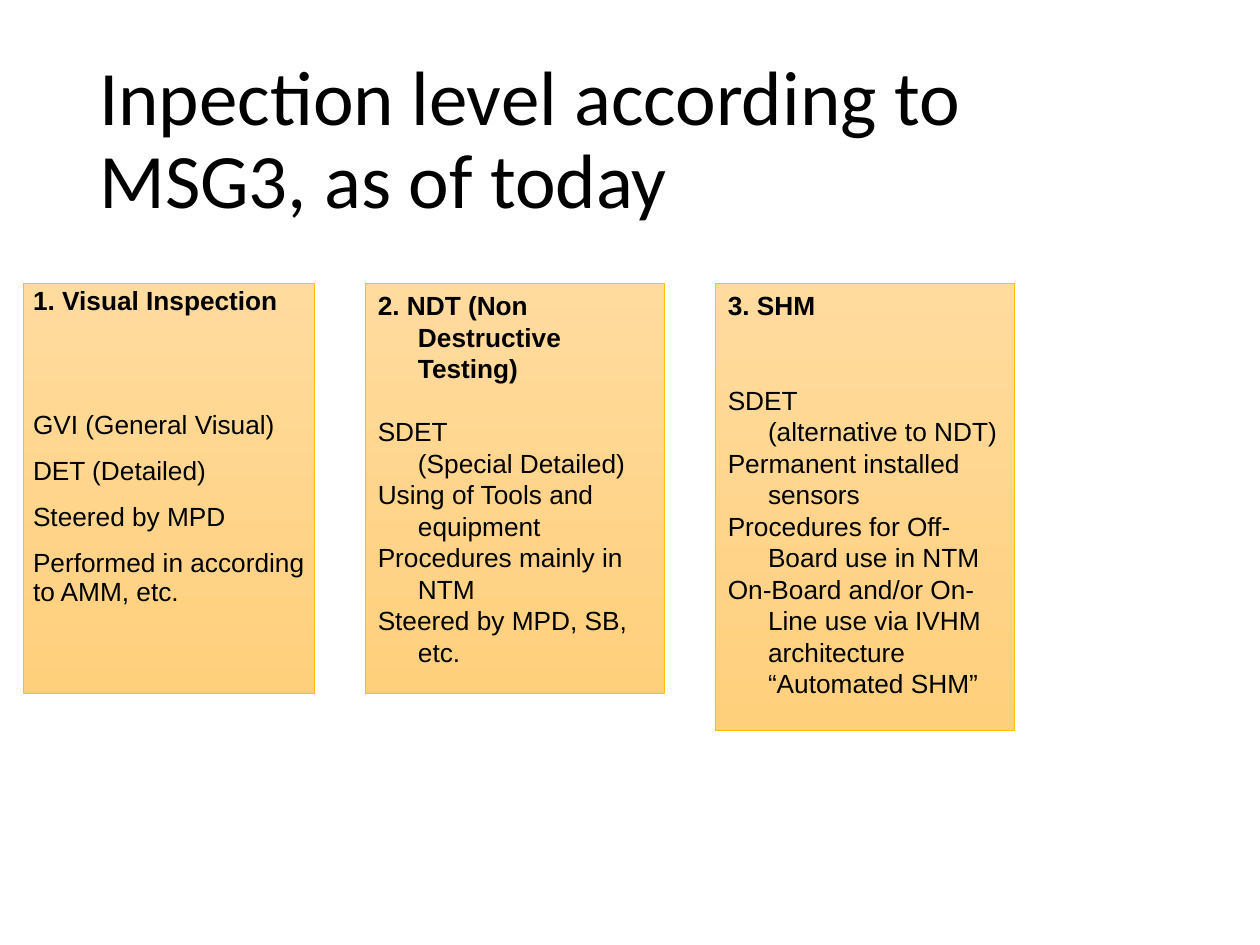
from pptx import Presentation
from pptx.dml.color import RGBColor
from pptx.enum.shapes import MSO_SHAPE
from pptx.enum.text import MSO_ANCHOR, PP_ALIGN
from pptx.util import Pt

RECT = MSO_SHAPE.RECTANGLE
TOP = MSO_ANCHOR.TOP
MIDDLE = MSO_ANCHOR.MIDDLE
LEFT = PP_ALIGN.LEFT


def paint(color, code):
    color.rgb = RGBColor.from_string(code)


def write(para, text, size=15, face="Arial", bold=False, lead=1.0,
          before=0, after=0, hang=0):
    para.text = text
    para.alignment = LEFT
    para.line_spacing = lead
    para.space_before = Pt(before)
    para.space_after = Pt(after)
    if hang:
        props = para._p.get_or_add_pPr()
        props.set("marL", str(Pt(hang)))
        props.set("indent", str(-Pt(hang)))
    for part in para.runs:
        font = part.font
        font.size, font.name, font.bold = Pt(size), face, bold
        paint(font.color, "000000")
    for gap in para._p.br_lst if hasattr(para._p, "br_lst") else para._p.xpath("a:br"):
        mark = gap.makeelement(gap.tag.replace("}br", "}rPr"), {"sz": str(size * 100)})
        gap.append(mark)


def add_title(slide, text):
    title = slide.shapes.title
    title.left, title.top = Pt(49.5), Pt(28.75)
    title.width, title.height = Pt(621), Pt(104.4)
    title.text_frame.word_wrap = True
    title.text_frame.vertical_anchor = MIDDLE
    write(title.text_frame.paragraphs[0], text, size=44, face="Calibri", lead=0.9)


def add_card(slide, left, width, height, head, lines, gap,
             pad=(7.2, 3.6), lead=1.0, before=0, hang=0):
    card = slide.shapes.add_shape(RECT, Pt(left), Pt(162), Pt(width), Pt(height))
    card.shadow.inherit = False
    card.fill.gradient()
    card.fill.gradient_angle = 270
    for stop, code in zip(card.fill.gradient_stops, ("FFDB9E", "FFD07C")):
        paint(stop.color, code)
    card.line.width = Pt(0.5)
    paint(card.line.color, "FFC000")
    frame = card.text_frame
    frame.word_wrap = True
    frame.vertical_anchor = TOP
    frame.margin_left = frame.margin_right = Pt(pad[0])
    frame.margin_top = frame.margin_bottom = Pt(pad[1])
    write(frame.paragraphs[0], head, bold=True, lead=lead, after=gap, hang=hang)
    for line in lines:
        write(frame.add_paragraph(), line, lead=lead, before=before, hang=hang)


def main():
    deck = Presentation()
    deck.slide_width, deck.slide_height = Pt(720), Pt(540)
    slide = deck.slides.add_slide(deck.slide_layouts[5])
    add_title(slide, "Inpection level according to MSG3, as of today")
    add_card(slide, 13.5, 166.4, 234, "1. Visual Inspection", [
        "GVI (General Visual)",
        "DET (Detailed)",
        "Steered by MPD",
        "Performed in according to AMM, etc.",
    ], gap=44.7, pad=(5.4, 2.7), lead=0.9, before=10)
    add_card(slide, 208.8, 171.2, 234, "2. NDT (Non Destructive Testing)", [
        "SDET \v(Special Detailed)",
        "Using of Tools and equipment",
        "Procedures mainly in NTM",
        "Steered by MPD, SB, etc.",
    ], gap=18, hang=23)
    add_card(slide, 408.8, 171.2, 255.6, "3. SHM", [
        "SDET\v(alternative to NDT)",
        "Permanent installed sensors",
        "Procedures for Off-Board use in NTM",
        "On-Board and/or On-Line use via IVHM architecture\v“Automated SHM”",
    ], gap=36, hang=23)
    deck.save("out.pptx")


if __name__ == "__main__":
    main()
